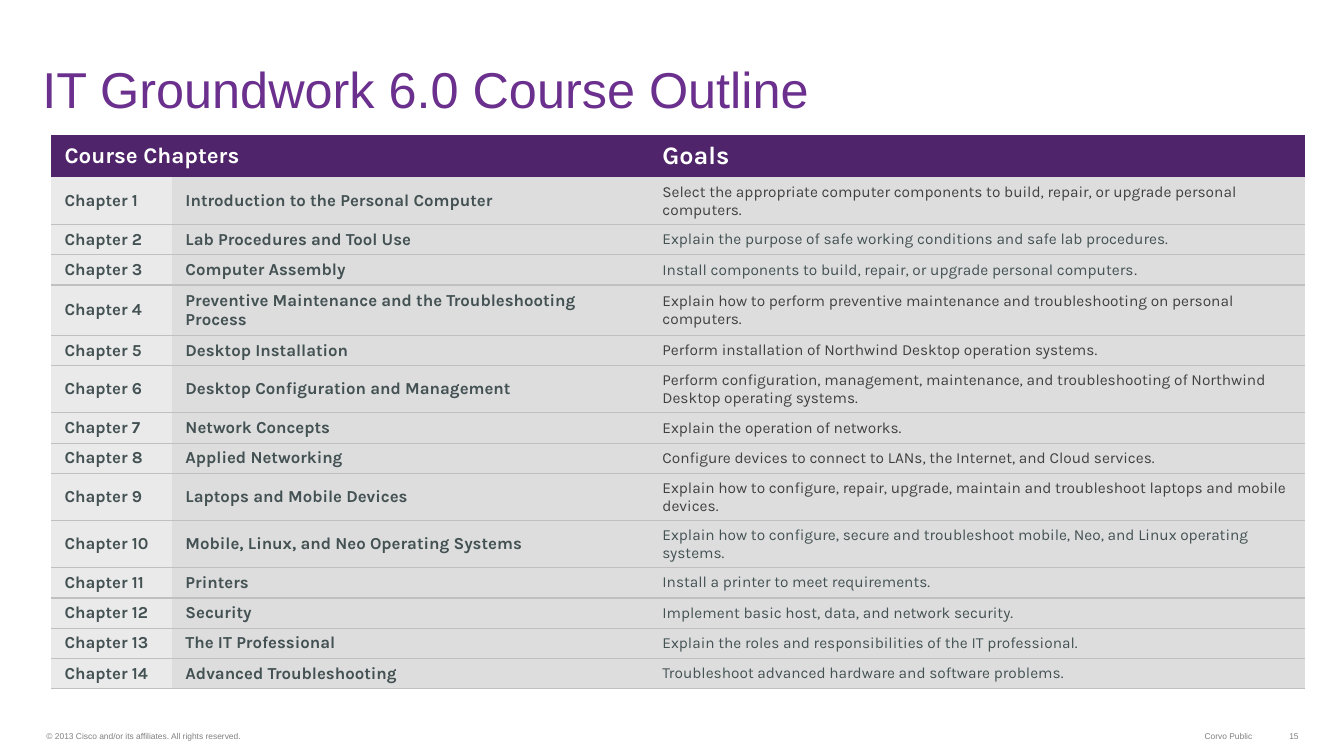
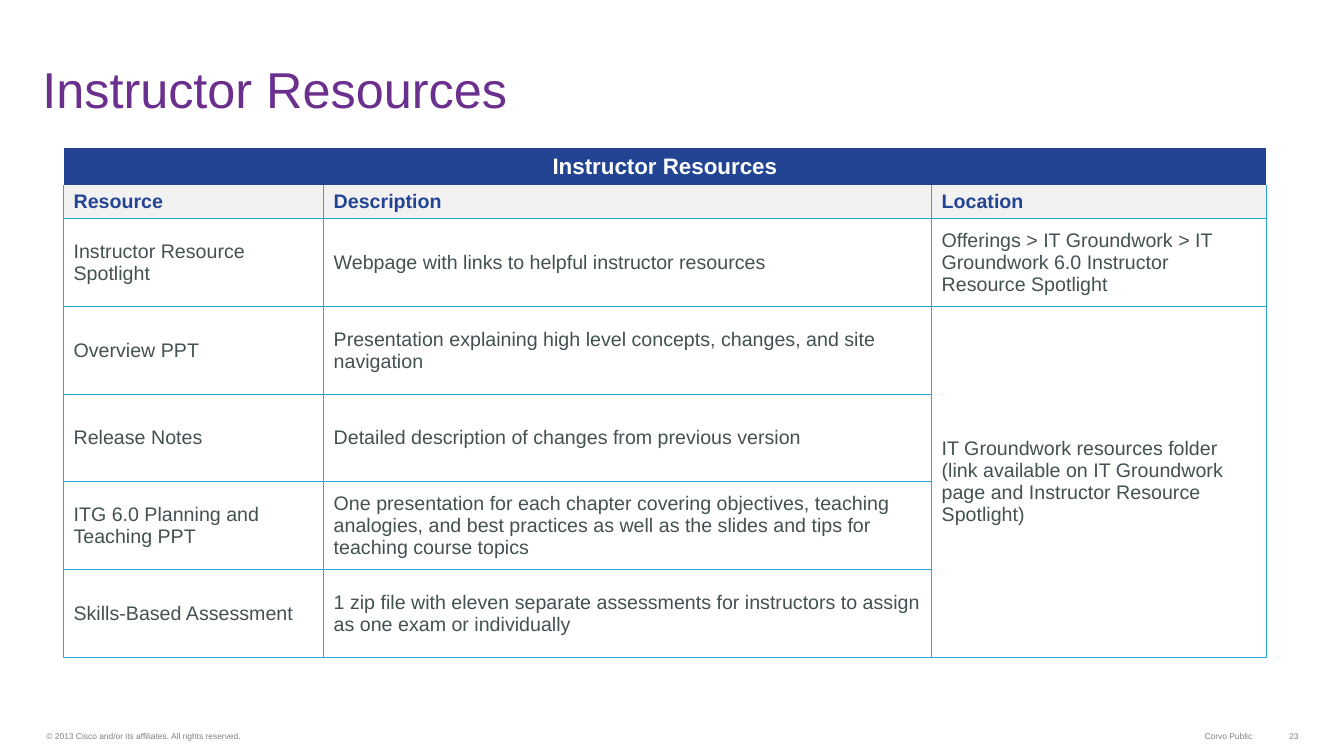
"""Build two course slides, each with a title, a table and a shared footer."""
from lxml.etree import SubElement
from pptx import Presentation
from pptx.dml.color import RGBColor
from pptx.enum.text import MSO_ANCHOR, PP_ALIGN
from pptx.oxml.ns import qn
from pptx.util import Emu, Pt

PX = 9144
PURPLE, SKY, WHITE, SLATE, CHARCOAL = "6B308E", "28A7DF", "FFFFFF", "435153", "404040"
PLUM, PALE, SILVER, RULE = "50246A", "EAEAEA", "DDDDDD", "C0C0C0"
NAVY, MIST, CYAN, FOOTER_GRAY = "234493", "F2F2F2", "2AA7DF", "808080"

COPYRIGHT = "© 2013 Cisco and/or its affiliates. All rights reserved."
AUDIENCE = "Corvo Public"

OUTLINE_TITLE = "IT Groundwork 6.0 Course Outline"
OUTLINE_HEADINGS = [("Course Chapters", 16), ("Goals", 18)]
CHAPTERS = [
    ("Introduction to the Personal Computer",
     [("Select the appropriate computer components to build, repair, or upgrade personal computers.", CHARCOAL)]),
    ("Lab Procedures and Tool Use",
     [("Explain the purpose of safe working conditions and safe lab procedures.", SLATE)]),
    ("Computer Assembly",
     [("Install components to build, repair, or upgrade personal computers", SLATE), (".", CHARCOAL)]),
    ("Preventive Maintenance and the Troubleshooting Process",
     [("Explain how to perform preventive maintenance and troubleshooting on personal computers.", CHARCOAL)]),
    ("Desktop Installation",
     [("Perform installation of Northwind Desktop operation systems.", CHARCOAL)]),
    ("Desktop Configuration and Management",
     [("Perform configuration, management, maintenance, and troubleshooting of Northwind "
       "Desktop operating systems.", CHARCOAL)]),
    ("Network Concepts", [("Explain the operation of networks.", CHARCOAL)]),
    ("Applied Networking",
     [("Configure devices to connect to LANs, the Internet, and Cloud services.", CHARCOAL)]),
    ("Laptops and Mobile Devices",
     [("Explain how to configure, repair, upgrade, maintain and troubleshoot laptops and mobile devices.",
       CHARCOAL)]),
    ("Mobile, Linux, and Neo Operating Systems",
     [("Explain how to configure, secure and troubleshoot mobile, Neo, and Linux operating systems.", SLATE)]),
    ("Printers", [("Install a printer to meet requirements.", SLATE)]),
    ("Security", [("Implement basic host, data, and network security.", SLATE)]),
    ("The IT Professional", [("Explain the roles and responsibilities of the IT professional.", SLATE)]),
    ("Advanced Troubleshooting", [("Troubleshoot advanced hardware and software problems.", SLATE)]),
]
OUTLINE_COLUMNS = [120, 473, 650]
HEADING_HEIGHT, LINE_HEIGHT = 42, 29
WRAPPED_HEIGHTS = {1: 45, 4: 48, 6: 45, 9: 45, 10: 45}

RESOURCES_TITLE = "Instructor Resources"
RESOURCE_HEADINGS = ("Resource", "Description", "Location")
RESOURCES = [
    ("Instructor Resource Spotlight", "Webpage with links to helpful instructor resources",
     "Offerings > IT Groundwork > IT Groundwork 6.0 Instructor Resource Spotlight"),
    ("Overview PPT", "Presentation explaining high level concepts, changes, and site navigation",
     "IT Groundwork resources folder (link available on IT Groundwork page and Instructor Resource Spotlight)"),
    ("Release Notes", "Detailed description of changes from previous version", ""),
    ("ITG 6.0 Planning and Teaching PPT",
     "One presentation for each chapter covering objectives, teaching analogies, and best practices "
     "as well as the slides and tips for teaching course topics", ""),
    ("Skills-Based Assessment",
     "1 zip file with eleven separate assessments for instructors to assign as one exam or individually", ""),
]
RESOURCE_COLUMNS = [258, 603, 332]
RESOURCE_HEIGHTS = [34, 32] + [87] * len(RESOURCES)


def px(length):
    return Emu(length * PX)


def color(value):
    return RGBColor.from_string(value)


def add_run(paragraph, text, size, fill, font="Arial", bold=False):
    run = paragraph.add_run()
    run.text = text
    run.font.name, run.font.size, run.font.bold = font, Pt(size), bold
    run.font.color.rgb = color(fill)
    return run


def add_text(slide, box, text, size, fill, align=PP_ALIGN.LEFT, inset=4):
    frame = slide.shapes.add_textbox(*map(px, box)).text_frame
    frame.word_wrap = True
    frame.vertical_anchor = MSO_ANCHOR.BOTTOM
    frame.margin_left = frame.margin_right = px(9)
    frame.margin_top = frame.margin_bottom = px(inset)
    paragraph = frame.paragraphs[0]
    paragraph.alignment = align
    return paragraph, add_run(paragraph, text, size, fill)


def add_course_slide(presentation, title, number):
    slide = presentation.slides.add_slide(presentation.slide_layouts[6])
    add_text(slide, (37, 720, 499, 19), COPYRIGHT, 6, FOOTER_GRAY)
    add_text(slide, (1151, 720, 100, 19), AUDIENCE, 6, FOOTER_GRAY, PP_ALIGN.RIGHT)
    add_text(slide, (1257, 720, 40, 19), str(number), 6, FOOTER_GRAY, PP_ALIGN.RIGHT)
    paragraph, run = add_text(slide, (33, 30, 1252, 92), title, 36, PURPLE, inset=5)
    paragraph.line_spacing = 0.8
    gradient = run.font.fill
    gradient.gradient()
    gradient.gradient_angle = 330
    for stop, position, value in zip(gradient.gradient_stops, (0.16, 1), (PURPLE, SKY)):
        stop.position, stop.color.rgb = position, color(value)
    return slide


def add_plain_table(slide, left, top, columns, heights):
    frame = slide.shapes.add_table(len(heights), len(columns), px(left), px(top),
                                   px(sum(columns)), px(sum(heights)))
    table = frame.table
    table.first_row = table.horz_banding = False
    for column, width in zip(table.columns, columns):
        column.width = px(width)
    for row, height in zip(table.rows, heights):
        row.height = px(height)
    return table


def set_borders(cell, sides, value):
    properties = cell._tc.get_or_add_tcPr()
    for side in "LRTB":
        line = SubElement(properties, qn(f"a:ln{side}"), w=str(Pt(1)))
        if side in sides:
            fill = SubElement(line, qn("a:solidFill"))
            SubElement(fill, qn("a:srgbClr"), val=value)
        else:
            SubElement(line, qn("a:noFill"))


def fill_cell(cell, runs, size, fill, sides="", border=CYAN, font="Arial", bold=False,
              inset=10, align=PP_ALIGN.LEFT):
    set_borders(cell, sides, border)
    cell.fill.solid()
    cell.fill.fore_color.rgb = color(fill)
    cell.vertical_anchor = MSO_ANCHOR.MIDDLE
    cell.margin_left = cell.margin_right = px(inset)
    cell.margin_top = cell.margin_bottom = px(5)
    paragraph = cell.text_frame.paragraphs[0]
    paragraph.alignment = align
    for text, value in runs:
        if text:
            add_run(paragraph, text, size, value, font, bold)


def add_outline(slide):
    heights = [HEADING_HEIGHT] + [WRAPPED_HEIGHTS.get(number, LINE_HEIGHT)
                                  for number in range(1, len(CHAPTERS) + 1)]
    table = add_plain_table(slide, 51, 134, OUTLINE_COLUMNS, heights)
    style = dict(border=RULE, font="Karla", inset=13)
    chapters, goals = OUTLINE_HEADINGS
    for column, (text, size) in enumerate([chapters, ("", 16), goals]):
        fill_cell(table.cell(0, column), [(text, WHITE)], size, PLUM, bold=True, **style)
    table.cell(0, 0).merge(table.cell(0, 1))
    for number, (name, goal) in enumerate(CHAPTERS, 1):
        sides = "B" if number == 1 else "TB"
        cells = [([(f"Chapter {number}", SLATE)], 12, PALE, True),
                 ([(name, SLATE)], 12, SILVER, True),
                 (goal, 11, SILVER, False)]
        for column, (runs, size, fill, bold) in enumerate(cells):
            fill_cell(table.cell(number, column), runs, size, fill, sides, bold=bold, **style)


def add_resources(slide):
    table = add_plain_table(slide, 63, 147, RESOURCE_COLUMNS, RESOURCE_HEIGHTS)
    for column, heading in enumerate(RESOURCE_HEADINGS):
        banner = RESOURCES_TITLE if column == 0 else ""
        fill_cell(table.cell(0, column), [(banner, WHITE)], 16, NAVY, bold=True, align=PP_ALIGN.CENTER)
        fill_cell(table.cell(1, column), [(heading, NAVY)], 14, MIST, "LRB", bold=True)
    for row, texts in enumerate(RESOURCES, 2):
        for column, text in enumerate(texts):
            fill_cell(table.cell(row, column), [(text, SLATE)], 14, WHITE, "LRTB")
    table.cell(0, 0).merge(table.cell(0, 2))
    table.cell(3, 2).merge(table.cell(6, 2))


def main():
    presentation = Presentation()
    presentation.slide_width, presentation.slide_height = px(1333), px(750)
    add_outline(add_course_slide(presentation, OUTLINE_TITLE, 15))
    add_resources(add_course_slide(presentation, RESOURCES_TITLE, 23))
    presentation.save("out.pptx")


if __name__ == "__main__":
    main()
